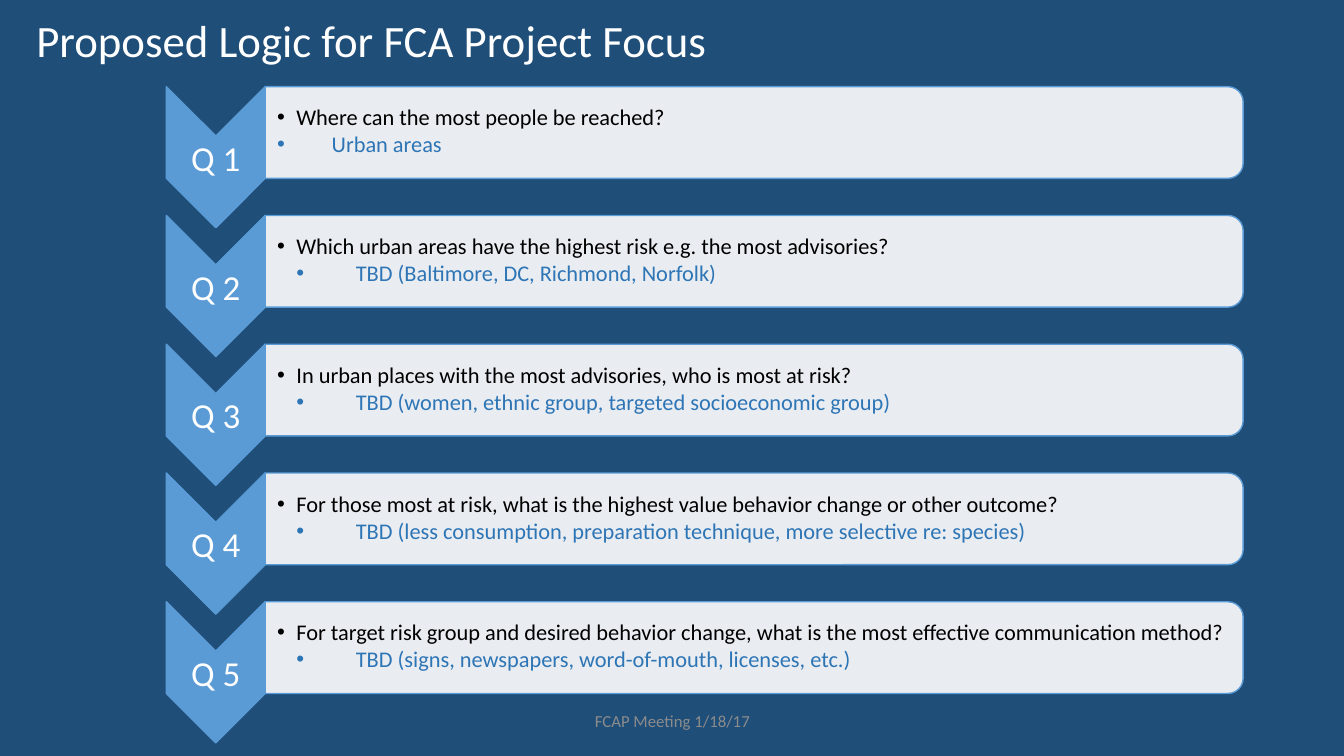
from dataclasses import dataclass

from lxml import etree
from pptx import Presentation
from pptx import util as u
from pptx.dml.color import RGBColor
from pptx.enum import shapes, text
from pptx.oxml import ns

Inches, Pt = u.Inches, u.Pt


@dataclass(frozen=True)
class Theme:
    font: str = "Calibri"
    back: str = "1F4E79"
    blue: str = "5B9BD5"
    white: str = "FFFFFF"
    ink: str = "000000"
    reply: str = "2E75B6"
    gray: str = "8C8C8C"
    title: int = 32
    label: int = 25
    body: int = 16
    foot: int = 12


THEME = Theme()
TOP, LAST, LEFT = 0.86, 5.97, 1.65
SIDE, TALL = 0.98, 1.4
WIDE, HIGH = 9.7, 0.91

# Question, reply, reply's text indent and hanging indent
ROWS = [
    ("Where can the most people be reached?", "Urban areas", 0.54, 0.54),
    ("Which urban areas have the highest risk e.g. the most advisories?",
     "TBD (Baltimore, DC, Richmond, Norfolk)", 0.78, 0.59),
    ("In urban places with the most advisories, who is most at risk?",
     "TBD (women, ethnic group, targeted socioeconomic group)", 0.78, 0.59),
    ("For those most at risk, what is the highest value behavior change or other outcome?",
     "TBD (less consumption, preparation technique, more selective re: species)", 0.78, 0.59),
    ("For target risk group and desired behavior change, "
     "what is the most effective communication method?",
     "TBD (signs, newspapers, word-of-mouth, licenses, etc.)", 0.78, 0.59),
]


def color(code):
    return RGBColor.from_string(code)


def add_run(para, words, size, code):
    run = para.add_run()
    run.text = words
    run.font.name = THEME.font
    run.font.size = Pt(size)
    run.font.color.rgb = color(code)


def set_frame(shape, pads):
    """Wrap and centre the text vertically; pads are left, top, right, bottom."""
    frame = shape.text_frame
    frame.word_wrap = True
    frame.auto_size = text.MSO_AUTO_SIZE.NONE
    frame.vertical_anchor = text.MSO_ANCHOR.MIDDLE
    (frame.margin_left, frame.margin_top,
     frame.margin_right, frame.margin_bottom) = map(Inches, pads)
    return frame


def add_box(slide, box, pads):
    return set_frame(slide.shapes.add_textbox(*map(Inches, box)), pads)


def add_line(slide, box, words, size, code, pads=(0.1, 0.05, 0.1, 0.05)):
    """Add a text box with one centred line."""
    para = add_box(slide, box, pads).paragraphs[0]
    para.alignment = text.PP_ALIGN.CENTER
    add_run(para, words, size, code)


def add_turned(slide, kind, box, code):
    """Add a shape that fills box after a quarter turn."""
    left, top, wide, high = box
    shift = (wide - high) / 2
    shape = slide.shapes.add_shape(
        kind, Inches(left + shift), Inches(top - shift), Inches(high), Inches(wide))
    shape.rotation = 90
    shape.shadow.inherit = False
    shape.fill.solid()
    shape.fill.fore_color.rgb = color(code)
    shape.line.color.rgb = color(THEME.blue)
    shape.line.width = Pt(1)
    return shape


def set_alpha(shape, share):
    tint = shape.fill._xPr.find(ns.qn("a:solidFill"))[0]
    etree.SubElement(tint, ns.qn("a:alpha")).set("val", str(share * 1000))


def add_bullet(para, words, code, indent, hang):
    para.line_spacing = 0.9
    para.space_after = Pt(2)
    props = para._p.get_or_add_pPr()
    props.set("marL", str(Inches(indent)))
    props.set("indent", str(-Inches(hang)))
    etree.SubElement(props, ns.qn("a:buFont")).set("typeface", "Arial")
    etree.SubElement(props, ns.qn("a:buChar")).set("char", "•")
    add_run(para, words, THEME.body, code)


def add_row(slide, top, label, ask, reply, indent, hang):
    kinds = shapes.MSO_SHAPE
    add_turned(slide, kinds.CHEVRON, (LEFT, top, SIDE, TALL), THEME.blue)
    add_line(slide, (LEFT, top + 0.49, SIDE, 0.42), label,
             THEME.label, THEME.white, (0.02,) * 4)
    start = LEFT + SIDE
    panel = add_turned(slide, kinds.ROUND_2_SAME_RECTANGLE,
                       (start, top, WIDE, HIGH), THEME.white)
    set_alpha(panel, 90)
    frame = add_box(slide, (start, top + 0.04, WIDE - 0.04, 0.82),
                    (0.12, 0.01, 0.01, 0.01))
    add_bullet(frame.paragraphs[0], ask, THEME.ink, 0.19, 0.19)
    add_bullet(frame.add_paragraph(), reply, THEME.reply, indent, hang)


def set_title(slide, words):
    title = slide.shapes.title
    title.left, title.top, title.width, title.height = map(
        Inches, (0.26, 0, 11.5, 0.85))
    para = set_frame(title, (0.1, 0.05, 0.1, 0.05)).paragraphs[0]
    para.alignment = text.PP_ALIGN.LEFT
    para.line_spacing = 0.9
    add_run(para, words, THEME.title, THEME.white)


def main():
    deck = Presentation()
    deck.slide_width, deck.slide_height = Inches(13.33), Inches(7.5)
    slide = deck.slides.add_slide(deck.slide_layouts[5])
    slide.background.fill.solid()
    slide.background.fill.fore_color.rgb = color(THEME.back)
    set_title(slide, "Proposed Logic for FCA Project Focus")
    step = (LAST - TOP) / (len(ROWS) - 1)
    for i, row in enumerate(ROWS):
        add_row(slide, TOP + i * step, f"Q {i + 1}", *row)
    add_line(slide, (4.42, 6.95, 4.5, 0.4), "FCAP Meeting 1/18/17",
             THEME.foot, THEME.gray)
    deck.save("out.pptx")


if __name__ == "__main__":
    main()
